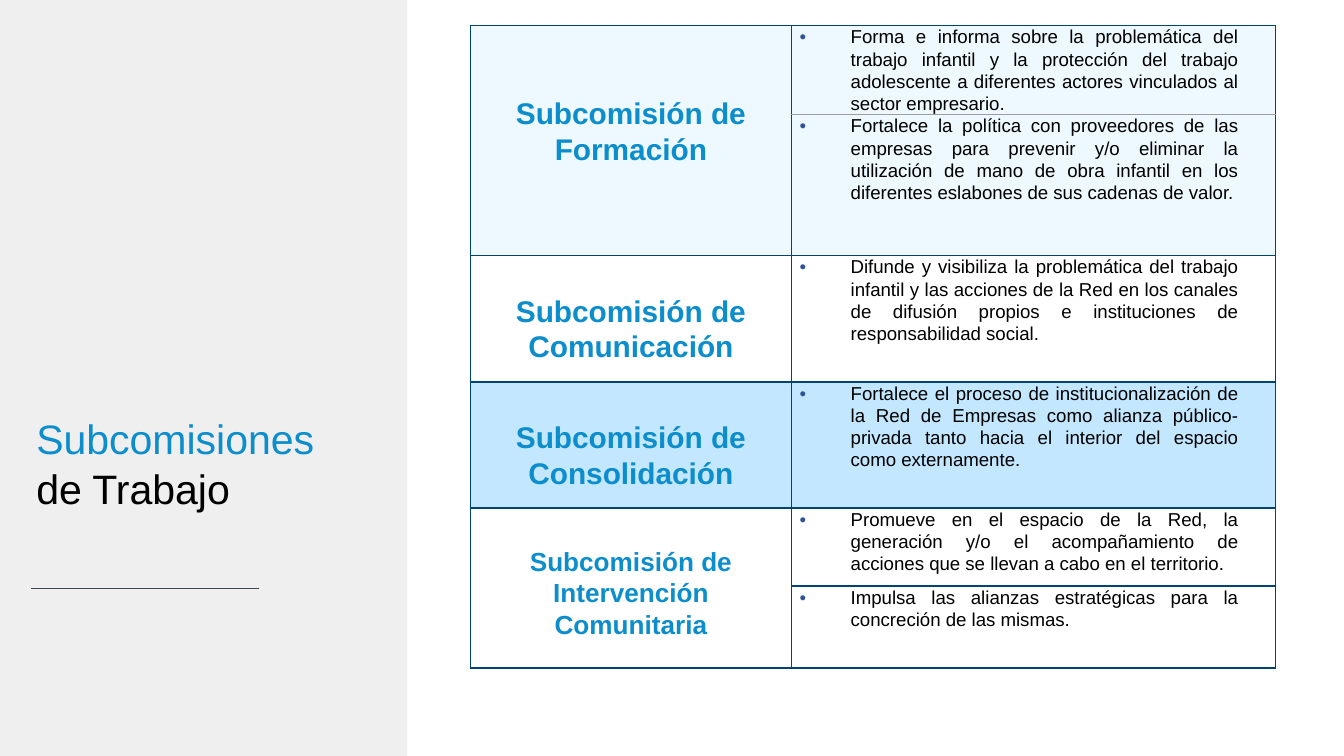
from dataclasses import dataclass

from lxml import etree
from pptx import Presentation
from pptx.dml.color import RGBColor
from pptx.enum.shapes import MSO_CONNECTOR, MSO_SHAPE
from pptx.enum.text import MSO_ANCHOR, MSO_AUTO_SIZE, PP_ALIGN
from pptx.oxml.ns import qn
from pptx.slide import Slide
from pptx.table import Table, _Cell
from pptx.text.text import _Paragraph
from pptx.util import Inches, Pt

LEFT, CENTER, JUST = PP_ALIGN.LEFT, PP_ALIGN.CENTER, PP_ALIGN.JUSTIFY
TOP, NOFIT = MSO_ANCHOR.TOP, MSO_AUTO_SIZE.NONE
RECT, LINE = MSO_SHAPE.RECTANGLE, MSO_CONNECTOR.STRAIGHT
FONT, BLUE, NAVY, GRAY, BLACK = "Arial", "0C8DCC", "004376", "9E9E9E", "000000"
WIDE = Inches(10)
HIGH = WIDE * 9 // 16
COLS = (2.39, 3.6)


@dataclass
class Task:
    """A task and the height of its row in inches."""
    text: str
    high: float


@dataclass
class Group:
    """A named group of tasks."""
    name: str
    fill: str
    tasks: list[Task]
    size: int = 16
    gap: float = 0.28
    split: str = NAVY


GROUPS = [
    Group("Subcomisión de Formación", "EDF9FE", [
        Task("Forma e informa sobre la problemática del trabajo infantil y la protección "
             "del trabajo adolescente a diferentes actores vinculados al sector empresario.", 0.66),
        Task("Fortalece la política con proveedores de las empresas para prevenir y/o eliminar "
             "la utilización de mano de obra infantil en los diferentes eslabones de sus "
             "cadenas de valor.", 1.04),
    ], gap=0.52, split=GRAY),
    Group("Subcomisión de Comunicación", "FFFFFF", [
        Task("Difunde y visibiliza la problemática del trabajo infantil y las acciones de la Red "
             "en los canales de difusión propios e instituciones de responsabilidad social.", 0.94),
    ]),
    Group("Subcomisión de Consolidación", "C3E7FE", [
        Task("Fortalece el proceso de institucionalización de la Red de Empresas como alianza "
             "público-privada tanto hacia el interior del espacio como externamente.", 0.94),
    ]),
    Group("Subcomisión de Intervención Comunitaria", "FFFFFF", [
        Task("Promueve en el espacio de la Red, la generación y/o el acompañamiento de acciones "
             "que se llevan a cabo en el territorio.", 0.58),
        Task("Impulsa las alianzas estratégicas para la concreción de las mismas.", 0.61),
    ], size=14),
]


def rgb(code: str) -> RGBColor:
    """Turn a hex string into a colour."""
    return RGBColor.from_string(code)


def style(para: _Paragraph, size: float, color: str, align: PP_ALIGN,
          bold: bool = False, lead: float = 1.07) -> None:
    """Set the font, spacing and alignment of a paragraph."""
    para.alignment = align
    para.line_spacing = lead
    font = para.font
    font.name, font.size, font.bold = FONT, Pt(size), bold
    font.color.rgb = rgb(color)


def bullet(para: _Paragraph) -> None:
    """Give a paragraph a coloured bullet and a hanging indent."""
    props = para._p.get_or_add_pPr()
    props.set("marL", str(Inches(0.38)))
    props.set("indent", str(-Inches(0.38)))
    last = props.find(qn("a:defRPr"))
    tint = etree.Element(qn("a:buClr"))
    etree.SubElement(tint, qn("a:srgbClr"), val="2F5496")
    face = etree.Element(qn("a:buFont"), typeface=FONT)
    mark = etree.Element(qn("a:buChar"), char="•")
    for item in (tint, face, mark):
        last.addprevious(item)


def edge(cell: _Cell, side: str, color: str) -> None:
    """Draw one border of a cell."""
    width = Pt(0.75 if color == GRAY else 1)
    line = etree.SubElement(cell._tc.get_or_add_tcPr(), qn(f"a:ln{side}"), w=str(width))
    fill = etree.SubElement(line, qn("a:solidFill"))
    etree.SubElement(fill, qn("a:srgbClr"), val=color)


def dress(cell: _Cell, fill: str, top: str, low: str) -> None:
    """Set the borders, fill and margins of a cell."""
    for side, color in zip("LRTB", (NAVY, NAVY, top, low)):
        edge(cell, side, color)
    cell.fill.solid()
    cell.fill.fore_color.rgb = rgb(fill)
    cell.vertical_anchor = TOP
    cell.margin_left = cell.margin_right = Inches(0.06)
    cell.margin_top = cell.margin_bottom = 0


def draw_group(table: Table, row: int, group: Group) -> None:
    """Fill the rows of one group."""
    last = len(group.tasks) - 1
    for step, task in enumerate(group.tasks):
        table.rows[row + step].height = Inches(task.high)
        name, cell = table.cell(row + step, 0), table.cell(row + step, 1)
        dress(name, group.fill, NAVY, NAVY)
        dress(cell, group.fill, group.split if step else NAVY,
              group.split if step < last else NAVY)
        cell.margin_right = Inches(0.28)
        cell.text = task.text
        para = cell.text_frame.paragraphs[0]
        style(para, 10, BLACK, JUST)
        bullet(para)
    head = table.cell(row, 0)
    if last:
        head.merge(table.cell(row + last, 0))
    head.margin_top = Inches(group.gap)
    head.text = group.name
    style(head.text_frame.paragraphs[0], group.size, BLUE, CENTER, True)


def draw_table(slide: Slide) -> None:
    """Draw the table of groups and their tasks."""
    highs = [task.high for group in GROUPS for task in group.tasks]
    table = slide.shapes.add_table(len(highs), len(COLS), Inches(3.5), Inches(0.19),
                                   Inches(sum(COLS)), Inches(sum(highs))).table
    table.first_row = table.horz_banding = False
    for col, width in zip(table.columns, COLS):
        col.width = Inches(width)
    row = 0
    for group in GROUPS:
        draw_group(table, row, group)
        row += len(group.tasks)


def draw_side(slide: Slide) -> None:
    """Draw the side panel with the title and its rule."""
    title = slide.shapes.title
    panel = slide.shapes.add_shape(RECT, Inches(-0.12), 0, Inches(3.15), HIGH)
    panel.shadow.inherit = False
    panel.fill.solid()
    panel.fill.fore_color.rgb = rgb("EFEFEF")
    panel.line.fill.background()
    title.element.addprevious(panel.element)

    title.left, title.top = Inches(0.23), Inches(2.71)
    title.width, title.height = Inches(2.67), Inches(1.07)
    frame = title.text_frame
    frame.auto_size, frame.vertical_anchor, frame.word_wrap = NOFIT, TOP, True
    frame.margin_left = frame.margin_right = frame.margin_bottom = Inches(0.04)
    frame.margin_top = Inches(0.37)
    frame.text = "Subcomisiones\nde Trabajo"
    for para, color in zip(frame.paragraphs, (BLUE, BLACK)):
        style(para, 22, color, LEFT, lead=1.0)

    rule = slide.shapes.add_connector(LINE, Inches(1.93), Inches(4.38), Inches(0.23), Inches(4.38))
    rule.line.color.rgb = rgb("3A4950")
    rule.line.width = Pt(0.75)
    etree.SubElement(rule.element.spPr, qn("a:effectLst"))


def main() -> None:
    """Build and save the slide."""
    deck = Presentation()
    deck.slide_width, deck.slide_height = WIDE, HIGH
    slide = deck.slides.add_slide(deck.slide_layouts[5])
    draw_side(slide)
    draw_table(slide)
    deck.save("out.pptx")


if __name__ == "__main__":
    main()
